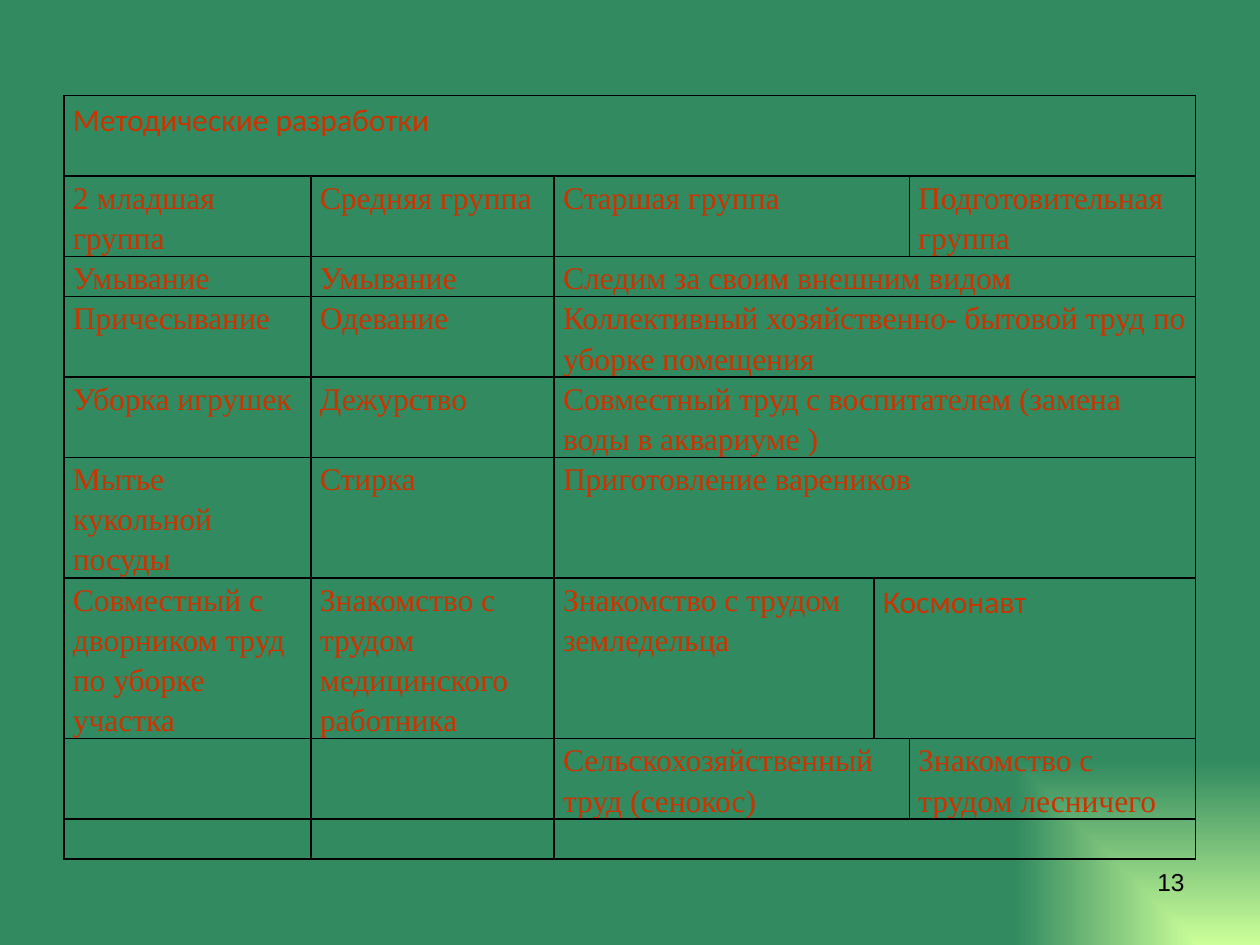
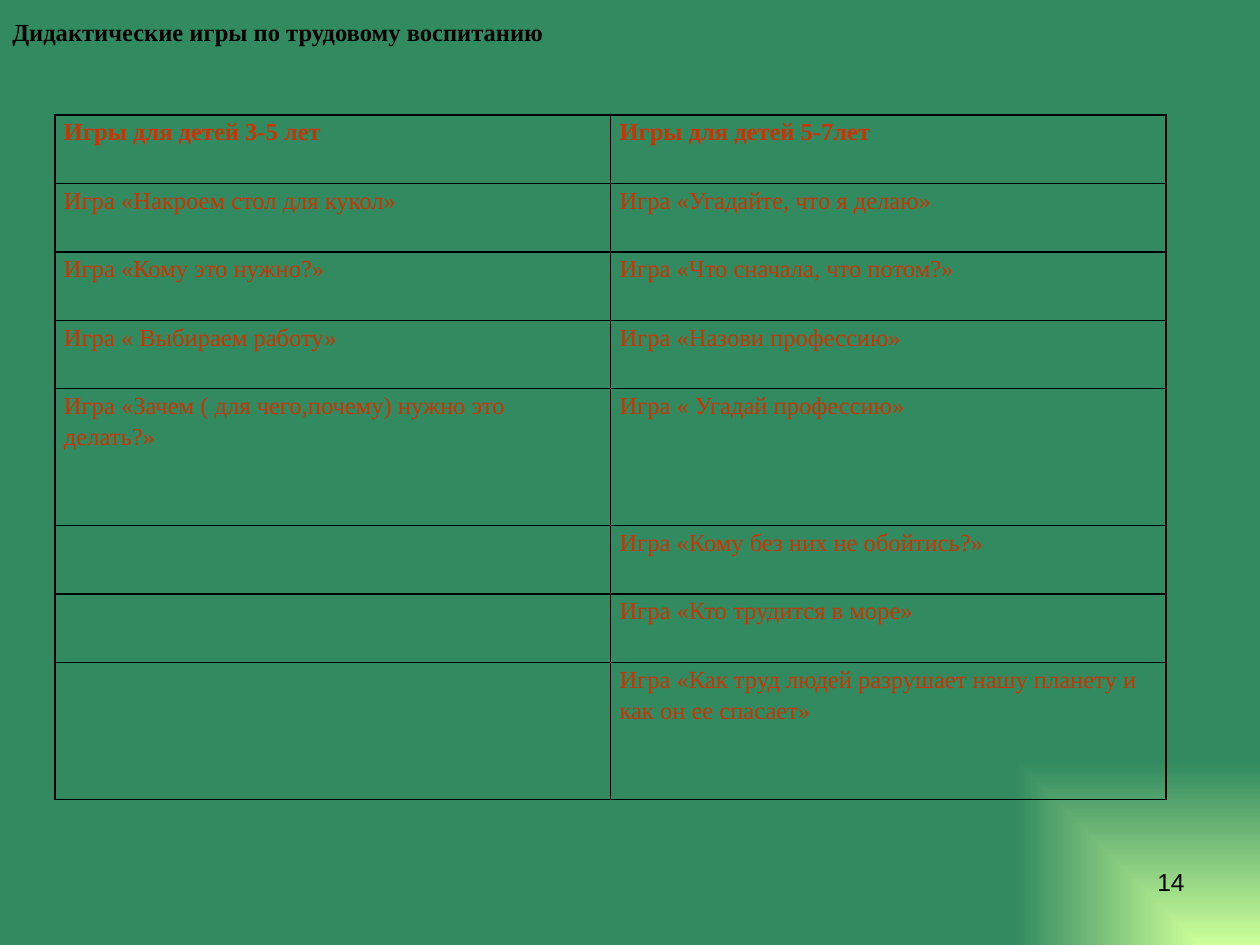
from dataclasses import dataclass

from lxml import etree
from pptx import Presentation
from pptx.dml.color import RGBColor
from pptx.enum.text import MSO_ANCHOR, PP_ALIGN
from pptx.oxml.ns import qn
from pptx.util import Cm, Pt

LEFT, RIGHT = PP_ALIGN.LEFT, PP_ALIGN.RIGHT
TOP, MIDDLE = MSO_ANCHOR.TOP, MSO_ANCHOR.MIDDLE


@dataclass(frozen=True)
class Theme:
    glow: str = "CCFF99"
    ground: str = "328A60"
    black: str = "000000"
    accent: str = "CC3300"
    serif: str = "Times New Roman"
    sans: str = "Calibri"
    number_font: str = "Arial"
    large: int = 18
    small: int = 14
    border: int = 1
    line_spacing: float = 1.15
    tight_spacing: Pt = Pt(22.9)
    cell_margin: float = 0.18


THEME = Theme()

MERGED = None

METHODS_COLS = [4.98, 4.9, 6.45, 0.71, 5.77]
METHODS_LINES = [2, 2, 1, 2, 2, 3, 4, 2, 1]
METHODS_LINE_HEIGHT = 0.81
METHODS_SANS = {"Методические разработки", "Космонавт"}
METHODS = [
    ["Методические разработки", MERGED, MERGED, MERGED, MERGED],
    ["2 младшая группа", "Средняя группа", "Старшая группа", MERGED,
     "Подготовительная группа"],
    ["Умывание", "Умывание", "Следим за своим внешним видом", MERGED, MERGED],
    ["Причесывание", "Одевание",
     "Коллективный хозяйственно- бытовой труд по уборке помещения",
     MERGED, MERGED],
    ["Уборка игрушек", "Дежурство",
     "Совместный труд с воспитателем (замена воды в аквариуме )",
     MERGED, MERGED],
    ["Мытье кукольной посуды", "Стирка", "Приготовление вареников",
     MERGED, MERGED],
    ["Совместный с дворником труд по уборке участка",
     "Знакомство с трудом медицинского работника",
     "Знакомство с трудом земледельца", "Космонавт", MERGED],
    ["", "", "Сельскохозяйственный труд (сенокос)", MERGED,
     "Знакомство с трудом лесничего"],
    ["", "", "", MERGED, MERGED],
]

GAMES_COLS = [11.2, 11.2]
GAMES_LINES = [1, 1, 1, 1, 2, 1, 1, 2]
GAMES_LINE_HEIGHT = 1.38
GAMES = [
    ["Игры для детей 3-5 лет", "Игры для детей 5-7лет"],
    ["Игра «Накроем стол для кукол»", "Игра «Угадайте, что я делаю»"],
    ["Игра «Кому это нужно?»", "Игра «Что сначала, что потом?»"],
    ["Игра « Выбираем работу»", "Игра «Назови профессию»"],
    ["Игра «Зачем ( для чего,почему) нужно это делать?»",
     "Игра « Угадай профессию»"],
    ["", "Игра «Кому без них не обойтись?»"],
    ["", "Игра «Кто трудится в море»"],
    ["", "Игра «Как труд людей разрушает нашу планету и как он ее спасает»"],
]


def set_background(master):
    fill = master.background.fill
    fill.gradient()
    stops = [(0, THEME.glow), (0.39, THEME.ground)]
    for stop, (position, color) in zip(fill.gradient_stops, stops):
        stop.position = position
        stop.color.rgb = RGBColor.from_string(color)
    grad = master.element.find(".//" + qn("a:gradFill"))
    grad.remove(grad.find(qn("a:lin")))
    corner = etree.SubElement(grad, qn("a:path"), path="rect")
    etree.SubElement(corner, qn("a:fillToRect"), l="100000", t="100000")


def format_text(p, font, size, color, bold=False, align=LEFT):
    p.alignment = align
    for r in p.runs:
        r.font.name = font
        r.font.size = Pt(size)
        r.font.bold = bold
        r.font.color.rgb = RGBColor.from_string(color)


def add_text(s, box, text, font, bold=False, align=LEFT, anchor=TOP):
    tf = s.shapes.add_textbox(*map(Cm, box)).text_frame
    tf.word_wrap = True
    tf.vertical_anchor = anchor
    tf.text = text
    format_text(tf.paragraphs[0], font, THEME.small, THEME.black, bold, align)


def add_page_number(s, number):
    add_text(s, (18.21, 17.35, 5.92, 1.32), str(number), THEME.number_font,
             align=RIGHT)


def add_borders(cell):
    tc_pr = cell._tc.get_or_add_tcPr()
    for side in ("lnL", "lnR", "lnT", "lnB"):
        line = etree.SubElement(tc_pr, qn(f"a:{side}"), w=str(Pt(THEME.border)))
        fill = etree.SubElement(line, qn("a:solidFill"))
        etree.SubElement(fill, qn("a:srgbClr"), val=THEME.black)


def style_cell(cell, text, size, font, bold, spacing):
    add_borders(cell)
    cell.fill.background()
    cell.margin_left = cell.margin_right = Cm(THEME.cell_margin)
    cell.margin_top = cell.margin_bottom = 0
    cell.text_frame.text = text or ""
    p = cell.text_frame.paragraphs[0]
    p.line_spacing = THEME.line_spacing if font == THEME.sans else spacing
    format_text(p, font, size, THEME.accent, bold)


def add_grid(s, left, top, cols, heights, rows, size, bold_header=False,
             sans_texts=(), spacing=THEME.line_spacing):
    table = s.shapes.add_table(len(rows), len(cols), Cm(left), Cm(top),
                               Cm(sum(cols)), Cm(sum(heights))).table
    table.first_row = table.horz_banding = False
    for column, width in zip(table.columns, cols):
        column.width = Cm(width)
    for i, (texts, height) in enumerate(zip(rows, heights)):
        table.rows[i].height = Cm(height)
        for j, text in enumerate(texts):
            font = THEME.sans if text in sans_texts else THEME.serif
            style_cell(table.cell(i, j), text, size, font,
                       bold_header and i == 0, spacing)
        merge_row(table, i, texts)


def merge_row(table, i, texts):
    starts = [j for j, text in enumerate(texts) if text is not MERGED]
    for start, end in zip(starts, starts[1:] + [len(texts)]):
        if end - start > 1:
            table.cell(i, start).merge(table.cell(i, end - 1))


def add_methods_slide(prs, number):
    s = prs.slides.add_slide(prs.slide_layouts[6])
    add_page_number(s, number)
    heights = [n * METHODS_LINE_HEIGHT for n in METHODS_LINES]
    add_grid(s, 1.29, 1.93, METHODS_COLS, heights, METHODS, THEME.large,
             sans_texts=METHODS_SANS, spacing=THEME.tight_spacing)


def add_games_slide(prs, number):
    s = prs.slides.add_slide(prs.slide_layouts[6])
    add_page_number(s, number)
    heights = [n * GAMES_LINE_HEIGHT for n in GAMES_LINES]
    add_grid(s, 1.11, 2.32, GAMES_COLS, heights, GAMES, THEME.small,
             bold_header=True)
    add_text(s, (0, 0, 25.4, 1.27), "Дидактические игры по трудовому воспитанию",
             THEME.serif, bold=True, anchor=MIDDLE)


def main():
    prs = Presentation()
    prs.slide_width, prs.slide_height = Cm(25.4), Cm(19.05)
    set_background(prs.slide_master)
    add_methods_slide(prs, 13)
    add_games_slide(prs, 14)
    prs.save("out.pptx")


if __name__ == "__main__":
    main()
